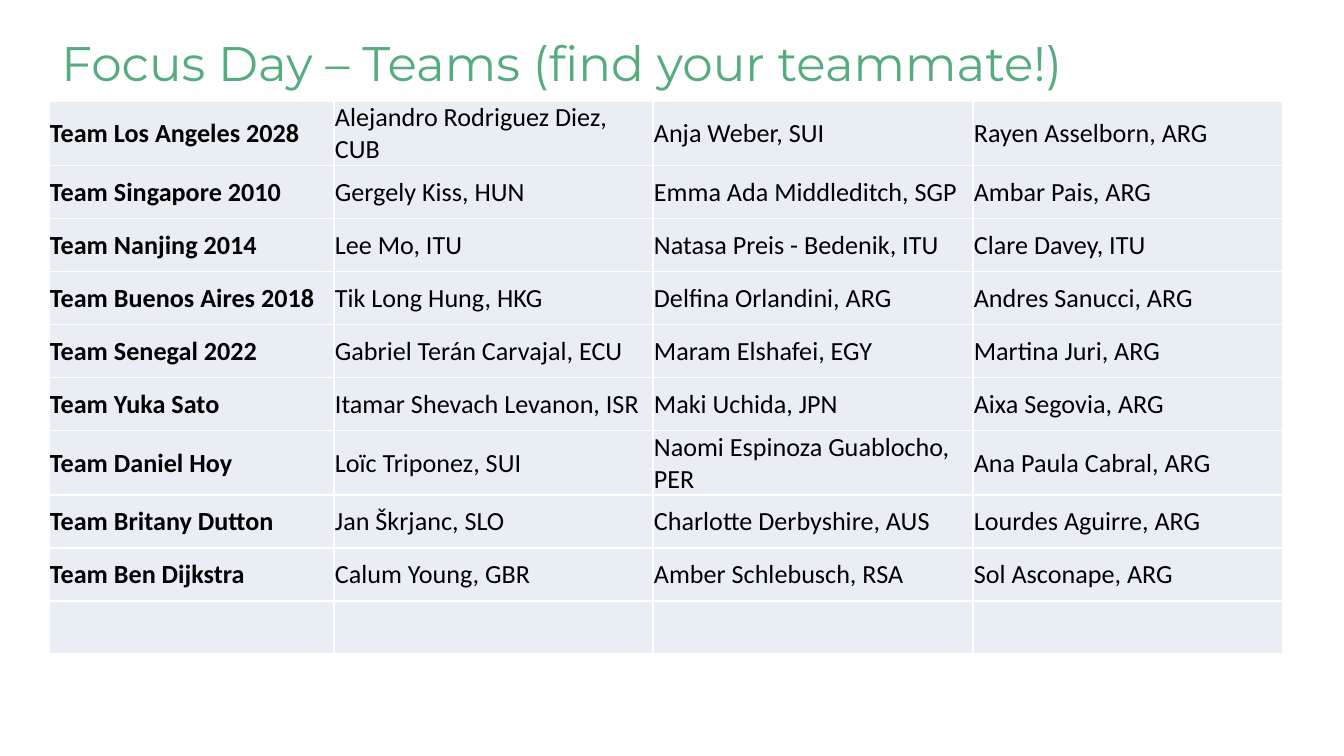
from lxml.etree import SubElement
from pptx import Presentation
from pptx.dml.color import RGBColor
from pptx.enum.text import MSO_ANCHOR as Anchor, MSO_AUTO_SIZE as AutoSize, PP_ALIGN as Align
from pptx.oxml.ns import qn
from pptx.util import Pt

PX = 914400 / 134.4
GREEN = RGBColor(0x56, 0xAC, 0x7F)
BLACK = RGBColor(0, 0, 0)
WHITE = RGBColor(0xFF, 0xFF, 0xFF)
PALE_BLUE = RGBColor(0xE9, 0xED, 0xF4)

COLUMN_WIDTHS = [285, 319, 320, 310]
ROW_HEIGHT = 53
TEAMS = [
    ["Team Los Angeles 2028", "Alejandro Rodriguez Diez, CUB", "Anja Weber, SUI", "Rayen Asselborn, ARG"],
    ["Team Singapore 2010", "Gergely Kiss, HUN", "Emma Ada Middleditch, SGP", "Ambar Pais, ARG"],
    ["Team Nanjing 2014", "Lee Mo, ITU", "Natasa Preis - Bedenik, ITU", "Clare Davey, ITU"],
    ["Team Buenos Aires 2018", "Tik Long Hung, HKG", "Delfina Orlandini, ARG", "Andres Sanucci, ARG"],
    ["Team Senegal 2022", "Gabriel Terán Carvajal, ECU", "Maram Elshafei, EGY", "Martina Juri, ARG"],
    ["Team Yuka Sato", "Itamar Shevach Levanon, ISR", "Maki Uchida, JPN", "Aixa Segovia, ARG"],
    ["Team Daniel Hoy", "Loïc Triponez, SUI", "Naomi Espinoza Guablocho, PER", "Ana Paula Cabral, ARG"],
    ["Team Britany Dutton", "Jan Škrjanc, SLO", "Charlotte Derbyshire, AUS", "Lourdes Aguirre, ARG"],
    ["Team Ben Dijkstra", "Calum Young, GBR", "Amber Schlebusch, RSA", "Sol Asconape, ARG"],
    ["", "", "", ""],
]


def px(length):
    return round(length * PX)


def add_borders(cell):
    properties = cell._tc.get_or_add_tcPr()
    for position, side in enumerate(["lnL", "lnR", "lnT", "lnB"]):
        line = SubElement(properties, qn(f"a:{side}"), w=str(Pt(1)))
        fill = SubElement(line, qn("a:solidFill"))
        SubElement(fill, qn("a:srgbClr"), val=str(WHITE))
        properties.insert(position, line)


deck = Presentation()
deck.slide_width, deck.slide_height = px(1344), px(756)
page = deck.slides.add_slide(deck.slide_layouts[5])

title = page.shapes.title
title.left, title.top, title.width, title.height = px(48), px(26), px(1234), px(73)
frame = title.text_frame
frame.text = "Focus Day – Teams (find your teammate!)"
frame.auto_size = AutoSize.NONE
frame.vertical_anchor = Anchor.MIDDLE
heading = frame.paragraphs[0]
heading.alignment = Align.LEFT
heading.font.name = "Montserrat"
heading.font.size = Pt(26)
heading.font.color.rgb = GREEN

table = page.shapes.add_table(
    len(TEAMS), len(COLUMN_WIDTHS), px(49), px(101),
    px(sum(COLUMN_WIDTHS)), px(ROW_HEIGHT * len(TEAMS)),
).table
table.first_row = table.horz_banding = False
for column, width in zip(table.columns, COLUMN_WIDTHS):
    column.width = px(width)

cell_format = {
    "margin_left": px(1), "margin_right": px(1), "margin_top": px(1),
    "margin_bottom": 0, "vertical_anchor": Anchor.MIDDLE,
}
for row, team in zip(table.rows, TEAMS):
    row.height = px(ROW_HEIGHT)
    for index, (cell, name) in enumerate(zip(row.cells, team)):
        for attribute, value in cell_format.items():
            setattr(cell, attribute, value)
        cell.fill.solid()
        cell.fill.fore_color.rgb = PALE_BLUE
        add_borders(cell)
        cell.text = name
        font = cell.text_frame.paragraphs[0].font
        font.name = "Calibri"
        font.size = Pt(14)
        font.bold = index == 0
        font.color.rgb = BLACK

deck.save("out.pptx")
